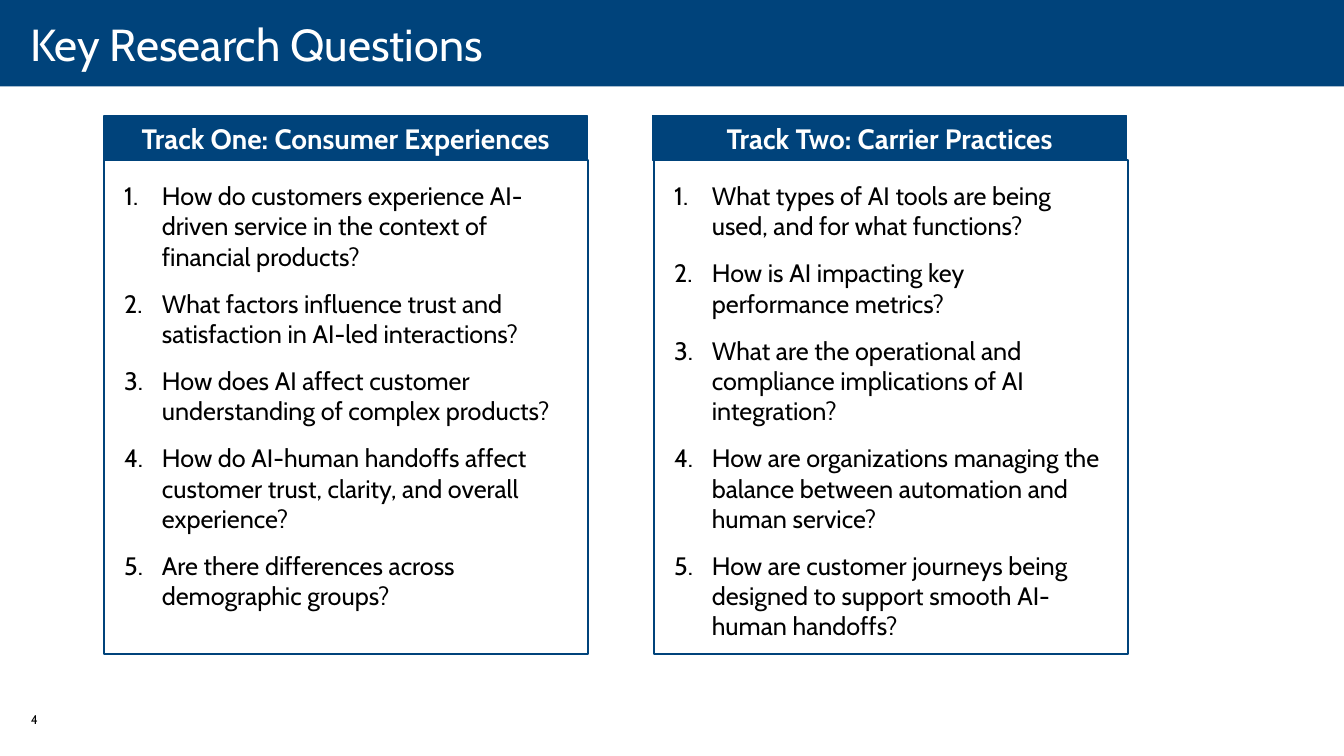
from lxml.etree import SubElement
from pptx import Presentation
from pptx.dml.color import RGBColor
from pptx.enum.shapes import MSO_SHAPE
from pptx.enum.text import MSO_ANCHOR as Anchor, MSO_AUTO_SIZE as AutoSize, PP_ALIGN as Align
from pptx.oxml.ns import qn
from pptx.util import Cm, Pt

NAVY = RGBColor(0x00, 0x43, 0x7B)
WHITE = RGBColor(0xFF, 0xFF, 0xFF)
BLACK = RGBColor(0x00, 0x00, 0x00)
FONT = "Cabin"
SLIDE_WIDTH = 33.87
HEADER_TOP, HEADER_HEIGHT = 2.92, 1.12
PANEL_HEIGHT = 12.45

TRACKS = [
    {
        "heading": "Track One: Consumer Experiences",
        "header_left": 2.62,
        "panel_left": 2.62,
        "width": 12.19,
        "header_line": 1,
        "questions": [
            "How do customers experience AI-driven service in the context of financial products?",
            "What factors influence trust and satisfaction in AI-led interactions?",
            "How does AI affect customer understanding of complex products?",
            "How do AI-human handoffs affect customer trust, clarity, and overall experience?",
            "Are there differences across demographic groups?",
        ],
    },
    {
        "heading": "Track Two: Carrier Practices",
        "header_left": 16.45,
        "panel_left": 16.48,
        "width": 11.94,
        "header_line": 0.75,
        "questions": [
            "What types of AI tools are being used, and for what functions?",
            "How is AI impacting key performance metrics?",
            "What are the operational and compliance implications of AI integration?",
            "How are organizations managing the balance between automation and human service?",
            "How are customer journeys being designed to support smooth AI-human handoffs?",
        ],
    },
]


def number_paragraph(paragraph):
    properties = paragraph._p.get_or_add_pPr()
    properties.set("marL", str(Cm(0.95)))
    properties.set("indent", str(-Cm(0.95)))
    bullet_color = SubElement(properties, qn("a:buClr"))
    SubElement(bullet_color, qn("a:srgbClr"), val=str(BLACK))
    SubElement(properties, qn("a:buFont"), typeface=FONT)
    SubElement(properties, qn("a:buAutoNum"), type="arabicPeriod")


def write_text(shape, *lines, size=18, color=BLACK, bold=False, align=Align.LEFT,
               anchor=Anchor.TOP, insets=(0.25, 0.13, 0.25, 0.13), wrap=True,
               numbered=False, space_after=0):
    frame = shape.text_frame
    frame.word_wrap = wrap
    frame.vertical_anchor = anchor
    (frame.margin_left, frame.margin_top,
     frame.margin_right, frame.margin_bottom) = map(Cm, insets)
    for index, line in enumerate(lines):
        paragraph = frame.add_paragraph() if index else frame.paragraphs[0]
        paragraph.alignment = align
        paragraph.space_after = Pt(space_after)
        if numbered:
            number_paragraph(paragraph)
        run = paragraph.add_run()
        run.text = line
        run.font.name = FONT
        run.font.size = Pt(size)
        run.font.bold = bold
        run.font.color.rgb = color


def add_box(slide, left, top, width, height, fill, line_width=0, opacity=100):
    shape = slide.shapes.add_shape(MSO_SHAPE.RECTANGLE, Cm(left), Cm(top), Cm(width), Cm(height))
    shape.shadow.inherit = False
    shape.fill.solid()
    shape.fill.fore_color.rgb = fill
    if opacity < 100:
        fill_color = shape.element.spPr.find(qn("a:solidFill")).find(qn("a:srgbClr"))
        SubElement(fill_color, qn("a:alpha"), val=str(opacity * 1000))
    if line_width:
        shape.line.color.rgb = NAVY
        shape.line.width = Pt(line_width)
    else:
        shape.line.fill.background()
    return shape


def add_label(slide, text, left, top, width, height, **text_format):
    box = slide.shapes.add_textbox(Cm(left), Cm(top), Cm(width), Cm(height))
    write_text(box, text, **text_format)


def add_panel(slide, track):
    panel = add_box(slide, track["panel_left"], HEADER_TOP + HEADER_HEIGHT, track["width"],
                    PANEL_HEIGHT, WHITE, line_width=1.5, opacity=40)
    write_text(panel, *track["questions"], insets=(0.51,) * 4, numbered=True, space_after=12)


def add_header(slide, track):
    header = add_box(slide, track["header_left"], HEADER_TOP, track["width"],
                     HEADER_HEIGHT, NAVY, line_width=track["header_line"])
    write_text(header, track["heading"], size=20, color=WHITE, bold=True,
               align=Align.CENTER, anchor=Anchor.MIDDLE)
    header.text_frame.auto_size = AutoSize.SHAPE_TO_FIT_TEXT


def main():
    presentation = Presentation()
    presentation.slide_width = Cm(SLIDE_WIDTH)
    presentation.slide_height = Cm(19.05)
    slide = presentation.slides.add_slide(presentation.slide_layouts[6])

    add_box(slide, 0, 0, SLIDE_WIDTH, 2.18, NAVY)
    add_label(slide, "4", 0.53, 17.81, 1.24, 1.02, size=9)
    add_label(slide, "Key Research Questions", 0, -0.13, SLIDE_WIDTH, 2.46, size=32,
              color=WHITE, anchor=Anchor.MIDDLE, insets=(0.76, 0, 0.51, 0))
    for track in TRACKS:
        add_panel(slide, track)
        add_header(slide, track)

    presentation.save("out.pptx")


if __name__ == "__main__":
    main()
